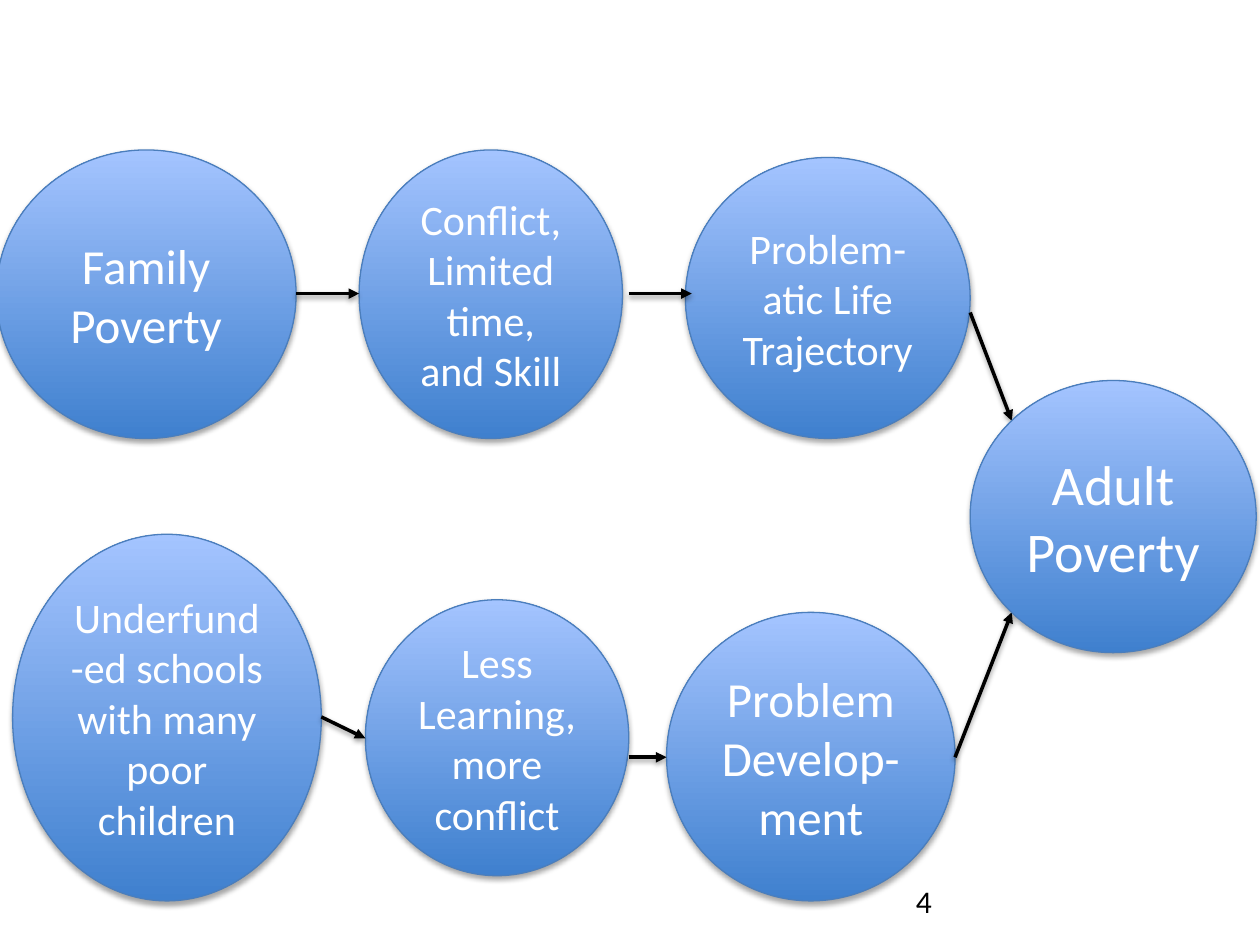
from lxml.etree import SubElement as Sub
from pptx import Presentation
from pptx.dml.color import RGBColor
from pptx.enum.shapes import MSO_CONNECTOR as Conn, MSO_SHAPE as Shape
from pptx.enum.text import MSO_ANCHOR as Anchor, PP_ALIGN as Align
from pptx.oxml.ns import qn
from pptx.util import Inches, Pt

DARK = RGBColor(0x3F, 0x80, 0xCE)
LIGHT = RGBColor(0xA4, 0xC4, 0xFF)
EDGE = RGBColor(0x4B, 0x7E, 0xBC)
WHITE = RGBColor(0xFF, 0xFF, 0xFF)
BLACK = RGBColor(0, 0, 0)

# Bubbles: x, y, width, height, text, size. Links: x1, y1, x2, y2.
# Both are measured from the top left corner of their row.
HOME = [
    (0, 0, 2.38, 2.29, "Family Poverty", 28),
    (2.88, 0, 2.09, 2.29, "Conflict, Limited time, and Skill", 24),
    (5.47, 0.06, 2.26, 2.23, "Problem-atic Life Trajectory", 24),
]
HOME_LINKS = [
    (2.38, 1.14, 2.88, 1.14),
    (5.02, 1.14, 5.52, 1.14),
    (7.73, 1.29, 8.06, 2.15),
]
SCHOOL = [
    (0, 0, 2.45, 2.91, "Underfund-ed schools with many poor children", 24),
    (2.8, 0.52, 2.09, 2.19, "Less Learning, more conflict", 24),
    (5.19, 0.62, 2.29, 2.29, "Problem Develop-ment", 28),
]
SCHOOL_LINKS = [
    (2.45, 1.45, 2.8, 1.62),
    (4.89, 1.77, 5.19, 1.77),
    (7.48, 1.77, 7.93, 0.62),
]
RESULT = [(0, 0, 2.27, 2.16, "Adult Poverty", 32)]


def style(para, size, color):
    font = para.runs[0].font
    font.name, font.size = "Calibri", Pt(size)
    font.color.rgb = color


def shade(props, drop, alpha):
    """Cast a soft black shadow straight down."""
    effects = props.find(qn("a:effectLst"))
    if effects is None:
        effects = Sub(props, qn("a:effectLst"))
    outer = Sub(effects, qn("a:outerShdw"), blurRad=str(Pt(3.1)),
                dist=str(Pt(drop)), dir="5400000", rotWithShape="0")
    black = Sub(outer, qn("a:srgbClr"), val=str(BLACK))
    Sub(black, qn("a:alpha"), val=str(alpha * 1000))


def bubble(slide, box, text, size):
    oval = slide.shapes.add_shape(Shape.OVAL, *map(Inches, box))
    oval.fill.gradient()
    oval.fill.gradient_angle = 90
    for stop, color in zip(oval.fill.gradient_stops, (DARK, LIGHT)):
        stop.color.rgb = color
    oval.line.color.rgb = EDGE
    oval.line.width = Pt(0.75)
    oval.shadow.inherit = False
    shade(oval._element.spPr, 1.8, 35)
    frame = oval.text_frame
    frame.word_wrap = True
    frame.vertical_anchor = Anchor.MIDDLE
    frame.text = text
    para = frame.paragraphs[0]
    para.alignment = Align.CENTER
    style(para, size, WHITE)


def arrow(slide, ends):
    link = slide.shapes.add_connector(Conn.STRAIGHT, *map(Inches, ends))
    link.line.color.rgb = BLACK
    link.line.width = Pt(2)
    Sub(link.line._get_or_add_ln(), qn("a:tailEnd"), type="triangle")
    shade(link._element.spPr, 1.6, 38)


def row(slide, left, top, bubbles, links=()):
    for x, y, width, height, text, size in bubbles:
        bubble(slide, (left + x, top + y, width, height), text, size)
    for x1, y1, x2, y2 in links:
        arrow(slide, (left + x1, top + y1, left + x2, top + y2))


def number(slide, box, text):
    frame = slide.shapes.add_textbox(*map(Inches, box)).text_frame
    frame.word_wrap = True
    frame.text = text
    style(frame.paragraphs[0], 18, BLACK)


def main():
    deck = Presentation()
    deck.slide_width, deck.slide_height = Inches(10), Inches(7.5)
    slide = deck.slides.add_slide(deck.slide_layouts[6])
    number(slide, (7.17, 6.95, 2.33, 0.4), "4")
    row(slide, -0.03, 1.19, HOME, HOME_LINKS)
    row(slide, 0.1, 4.24, SCHOOL, SCHOOL_LINKS)
    row(slide, 7.7, 3.02, RESULT)
    deck.save("out.pptx")


if __name__ == "__main__":
    main()
